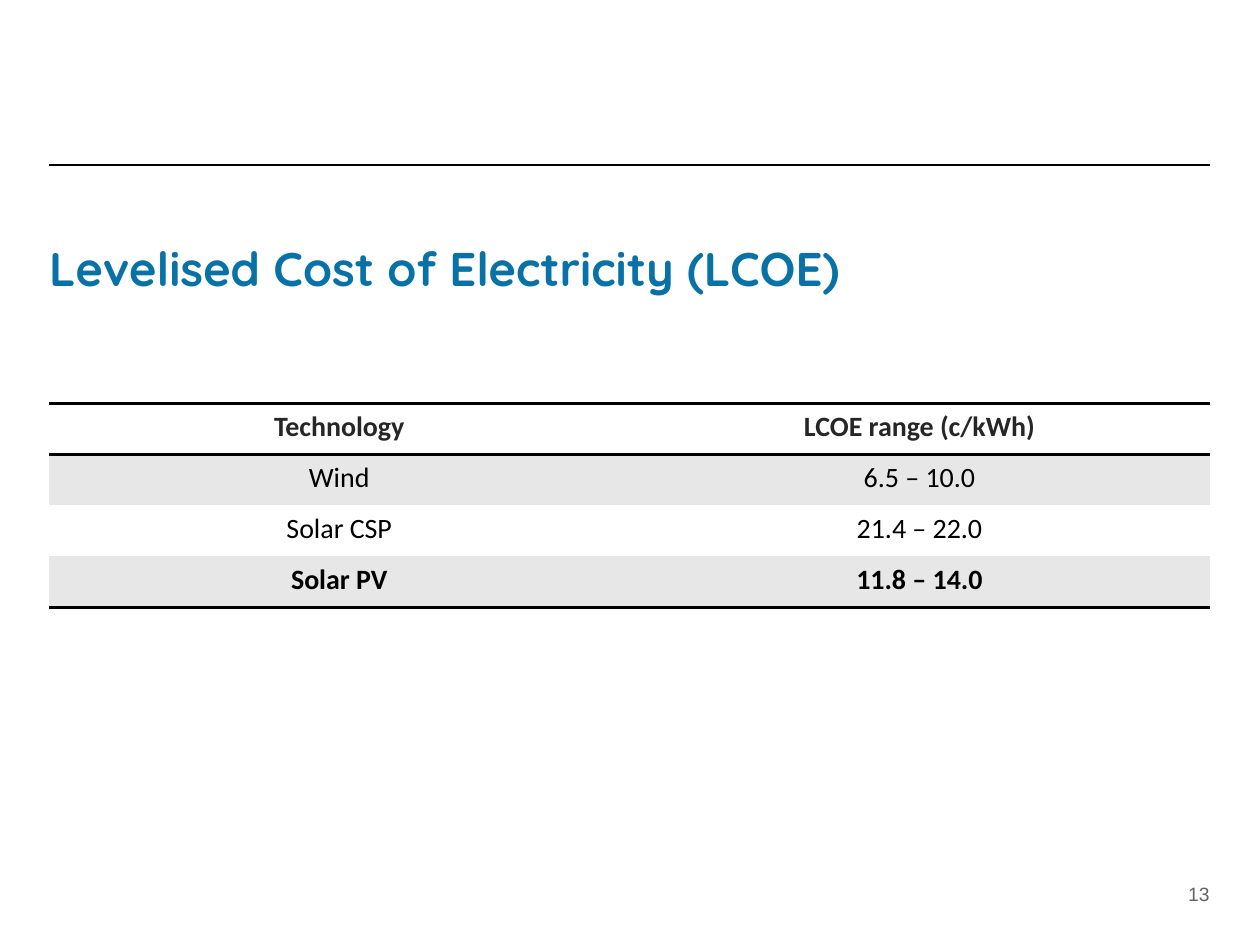
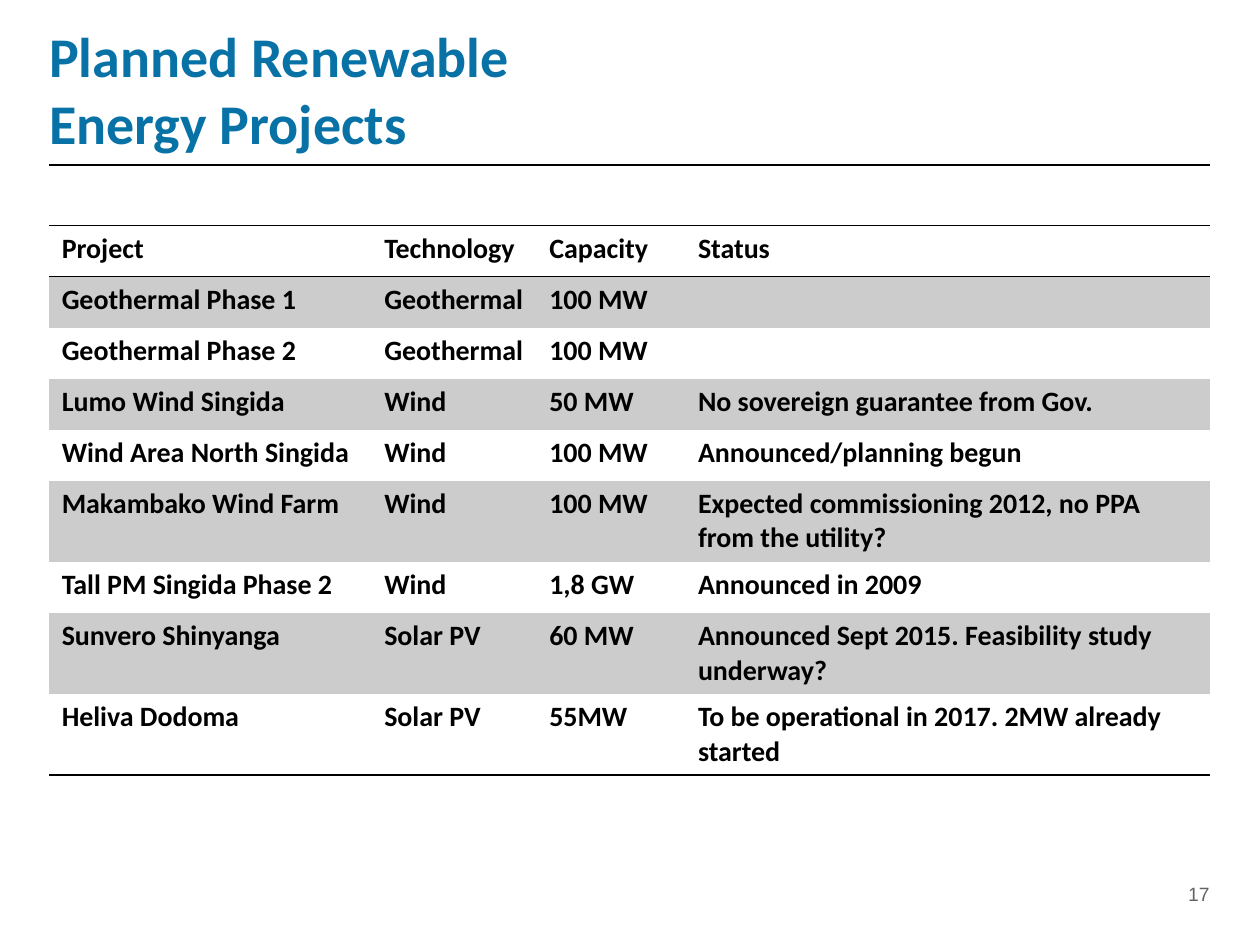
from lxml.etree import SubElement
from pptx import Presentation
from pptx.dml.color import RGBColor
from pptx.enum.text import MSO_ANCHOR, MSO_AUTO_SIZE, PP_ALIGN
from pptx.oxml import parse_xml
from pptx.oxml.ns import nsdecls, qn
from pptx.util import Inches, Pt

# Content
COLORS = {"title": "0872A6", "rule": "000000", "text": "000000",
          "head": "262626", "number": "646464", "white": "FFFFFF",
          "light band": "E7E7E7", "dark band": "CCCCCC"}

COSTS = [
    ("Technology", "LCOE range (c/kWh)"),
    ("Wind", "6.5 – 10.0"),
    ("Solar CSP", "21.4 – 22.0"),
    ("Solar PV", "11.8 – 14.0"),
]
PROJECTS = [
    ("Project", "Technology", "Capacity", "Status"),
    ("Geothermal Phase 1", "Geothermal", "100 MW", ""),
    ("Geothermal Phase 2", "Geothermal", "100 MW", ""),
    ("Lumo Wind Singida", "Wind", "50 MW", "No sovereign guarantee from Gov."),
    ("Wind Area North Singida", "Wind", "100 MW", "Announced/planning begun"),
    ("Makambako Wind Farm", "Wind", "100 MW",
     "Expected commissioning 2012, no PPA from the utility?"),
    ("Tall PM Singida Phase 2", "Wind", "1,8 GW", "Announced in 2009"),
    ("Sunvero Shinyanga", "Solar PV", "60 MW",
     "Announced Sept 2015. Feasibility study underway?"),
    ("Heliva Dodoma", "Solar PV", "55MW",
     "To be operational in 2017. 2MW already started"),
]
SLIDES = [
    {"number": 13, "title": ["Levelised Cost of Electricity (LCOE)"],
     "title top": 1.86, "title font": ("Quicksand", 27),
     "rows": COSTS, "top": 3.2, "cols": [1, 1], "align": PP_ALIGN.CENTER,
     "band": "light band", "head": "head", "bold rows": {0, 3}, "border": 2},
    {"number": 17, "title": ["Planned Renewable", "Energy Projects"],
     "title top": 0.44, "title font": ("Calibri", 32),
     "rows": PROJECTS, "top": 1.79, "cols": [2.56, 1.31, 1.18, 4.16],
     "align": PP_ALIGN.LEFT, "band": "dark band", "head": "text",
     "bold rows": set(range(len(PROJECTS))), "border": 1},
]

# Grid
LEFT, WIDTH, RULE_TOP = 0.39, 9.21, 1.31
ROW_HEIGHT = Inches(1.62) // 4
NO_STYLE = "{2D5ABB26-0587-4C30-8999-92F81FD0307C}"


def rgb(name):
    return RGBColor.from_string(COLORS[name])


def add_run(p, text, font, size, color, bold=False):
    r = p.add_run()
    r.text = text
    r.font.name, r.font.size, r.font.bold = font, Pt(size), bold
    r.font.color.rgb = rgb(color)


def place(sp, left, top, width, height, anchor):
    sp.left, sp.top, sp.width, sp.height = map(Inches, (left, top, width, height))
    tf = sp.text_frame
    tf.margin_left = tf.margin_right = tf.margin_top = tf.margin_bottom = 0
    tf.word_wrap, tf.auto_size = True, MSO_AUTO_SIZE.NONE
    tf.vertical_anchor = anchor
    return tf.paragraphs[0]


def add_frame(s, page):
    """Title, rule and slide number."""
    p = place(s.shapes.title, LEFT, page["title top"], WIDTH, 0.53, MSO_ANCHOR.MIDDLE)
    p.alignment = PP_ALIGN.LEFT
    for i, line in enumerate(page["title"]):
        if i:
            p.add_line_break()
        add_run(p, line, *page["title font"], "title", True)

    rule = s.shapes.add_connector(1, Inches(LEFT), Inches(RULE_TOP),
                                  Inches(LEFT + WIDTH), Inches(RULE_TOP))
    rule.line.color.rgb, rule.line.width = rgb("rule"), Pt(0.75)
    SubElement(rule._element.spPr, qn("a:effectLst"))

    number = s.shapes.add_textbox(0, 0, 0, 0)
    p = place(number, LEFT + WIDTH - 0.79, 7, 0.79, 0.34, MSO_ANCHOR.TOP)
    p.alignment = PP_ALIGN.RIGHT
    add_run(p, str(page["number"]), "Arial", 11, "number")


def set_borders(cell, sides, width):
    tcPr = cell._tc.get_or_add_tcPr()
    for i, side in enumerate(sides):
        tcPr.insert(i, parse_xml(
            f'<a:{side} {nsdecls("a")} w="{Pt(width)}"><a:solidFill>'
            f'<a:srgbClr val="{COLORS["rule"]}"/></a:solidFill></a:{side}>'))


def add_data_table(s, page):
    rows, cols = page["rows"], page["cols"]
    table = s.shapes.add_table(len(rows), len(cols), Inches(LEFT), Inches(page["top"]),
                               Inches(WIDTH), ROW_HEIGHT * len(rows)).table
    table.first_row = table.horz_banding = False
    table._tbl.tblPr.find(qn("a:tableStyleId")).text = NO_STYLE
    for column, share in zip(table.columns, cols):
        column.width = Inches(WIDTH * share / sum(cols))

    borders = {0: ("lnT", "lnB"), len(rows) - 1: ("lnB",)}
    for i, row in enumerate(rows):
        for j, text in enumerate(row):
            cell = table.cell(i, j)
            cell.fill.solid()
            cell.fill.fore_color.rgb = rgb(page["band"] if i % 2 else "white")
            set_borders(cell, borders.get(i, ()), page["border"])
            p = cell.text_frame.paragraphs[0]
            p.alignment = page["align"]
            if text:
                add_run(p, text, "Calibri", 16, "text" if i else page["head"],
                        i in page["bold rows"])


def main():
    prs = Presentation()
    prs.slide_width, prs.slide_height = Inches(10), Inches(7.5)
    for page in SLIDES:
        s = prs.slides.add_slide(prs.slide_layouts[5])
        add_frame(s, page)
        add_data_table(s, page)
    prs.save("out.pptx")


if __name__ == "__main__":
    main()
